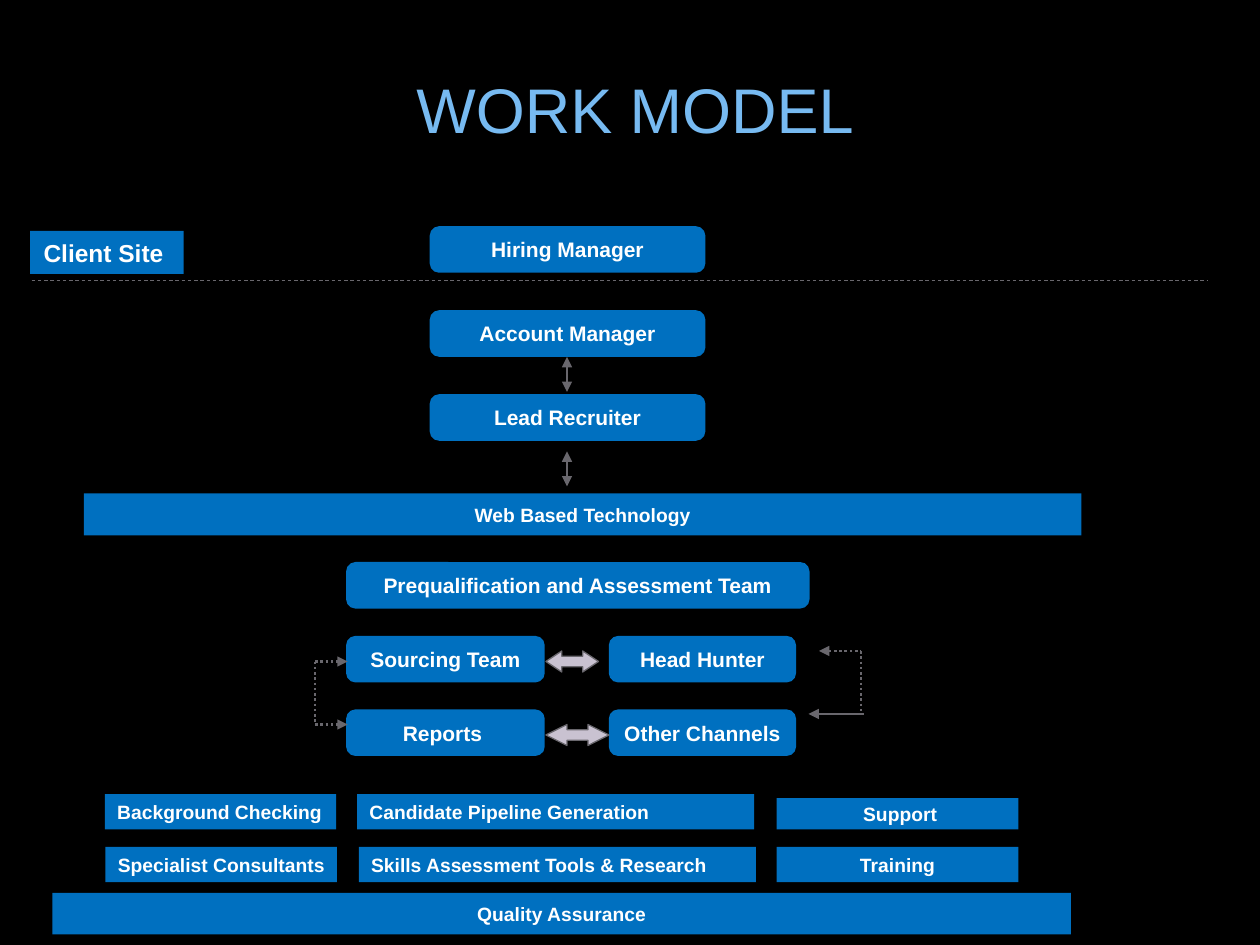
from lxml import etree
from pptx import Presentation
from pptx.dml.color import RGBColor
from pptx.enum.dml import MSO_LINE
from pptx.enum.shapes import MSO_CONNECTOR, MSO_SHAPE
from pptx.enum.text import MSO_ANCHOR, PP_ALIGN
from pptx.oxml.ns import qn
from pptx.util import Pt

BLACK = RGBColor(0x00, 0x00, 0x00)
WHITE = RGBColor(0xFF, 0xFF, 0xFF)
BLUE = RGBColor(0x00, 0x70, 0xC0)
SKY = RGBColor(0x77, 0xBA, 0xF1)
GRAY = RGBColor(0x69, 0x67, 0x6D)
LILAC = RGBColor(0xC9, 0xC2, 0xD1)

RECT = MSO_SHAPE.RECTANGLE
ROUND = MSO_SHAPE.ROUNDED_RECTANGLE
DOUBLE_ARROW = MSO_SHAPE.LEFT_RIGHT_ARROW
STRAIGHT = MSO_CONNECTOR.STRAIGHT
MIDDLE = MSO_ANCHOR.MIDDLE
LEFT, CENTER = PP_ALIGN.LEFT, PP_ALIGN.CENTER
DOT, DASH = MSO_LINE.ROUND_DOT, MSO_LINE.DASH


def write(box, text, size, color, align=CENTER, bold=True, wrap=False):
    frame = box.text_frame
    frame.word_wrap = wrap
    frame.vertical_anchor = MIDDLE
    para = frame.paragraphs[0]
    para.alignment = align
    span = para.add_run()
    span.text = text
    span.font.name = "Arial"
    span.font.size = Pt(size)
    span.font.bold = bold
    span.font.color.rgb = color


def add_box(kind, left, top, width, height, fill):
    box = slide.shapes.add_shape(kind, Pt(left), Pt(top), Pt(width), Pt(height))
    box.shadow.inherit = False
    box.fill.solid()
    box.fill.fore_color.rgb = fill
    box.line.fill.background()
    return box


deck = Presentation()
deck.slide_width, deck.slide_height = Pt(720), Pt(540)
slide = deck.slides.add_slide(deck.slide_layouts[6])
slide.background.fill.solid()
slide.background.fill.fore_color.rgb = BLACK

title = slide.shapes.add_textbox(Pt(30), Pt(36), Pt(666), Pt(52))
write(title, "WORK MODEL", 36, SKY, bold=False, wrap=True)

team_boxes = [
    ("Hiring Manager", 245.6, 129.3, 157.5),
    ("Account Manager", 245.6, 177.3, 157.5),
    ("Lead Recruiter", 245.6, 225.3, 157.5),
    ("Prequalification and Assessment Team", 197.8, 321.2, 264.8),
    ("Sourcing Team", 197.8, 363.4, 113.5),
    ("Head Hunter", 347.9, 363.4, 107),
    ("Reports ", 197.8, 405.4, 113.5),
    ("Other Channels", 347.9, 405.4, 107),
]
for text, left, top, width in team_boxes:
    box = add_box(ROUND, left, top, width, 26.6, BLUE)
    box.adjustments[0] = 0.2
    write(box, text, 12, WHITE)

bars = [
    ("Client Site ", 17.3, 132, 87.7, 24.5, 14, CENTER),
    ("Web Based Technology", 48, 282, 570, 24, 11, CENTER),
    ("Background Checking", 59.9, 453.8, 132.2, 20.2, 11, LEFT),
    ("Candidate Pipeline Generation", 204, 453.8, 226.9, 20.2, 11, LEFT),
    (" Support", 443.8, 456, 138.2, 18, 11, CENTER),
    ("Specialist Consultants", 60.3, 483.9, 132.2, 20.2, 11, LEFT),
    ("Skills Assessment Tools & Research", 205, 483.9, 226.9, 20.2, 11, LEFT),
    ("Training", 443.8, 483.9, 138.2, 20.2, 11, CENTER),
    ("Quality Assurance", 30, 510.2, 582, 23.8, 11, CENTER),
]
for text, left, top, width, height, size, align in bars:
    write(add_box(RECT, left, top, width, height, BLUE), text, size, WHITE, align)

for top, width, head in [(372, 30, 0.75), (414, 36, 1)]:
    arrow = add_box(DOUBLE_ARROW, 312, top, width, 12, LILAC)
    arrow.adjustments[1] = head
    arrow.line.color.rgb = GRAY
    arrow.line.width = Pt(0.75)

links = [
    (324, 204, 324, 224, 0.75, None, ("headEnd", "tailEnd")),
    (324, 258, 324, 278, 0.75, None, ("headEnd", "tailEnd")),
    (462, 408, 493.5, 408, 1.5, None, ("headEnd",)),
    (492, 372, 492, 408, 1.5, DOT, ()),
    (468, 372, 492, 372, 1.5, DOT, ("headEnd",)),
    (180, 378, 180, 414, 1.5, DOT, ()),
    (180, 378, 198.7, 378, 1.5, DOT, ("tailEnd",)),
    (180, 414, 198.7, 414, 1.5, DOT, ("tailEnd",)),
    (18, 160, 690, 160, 0.5, DASH, ()),
]
for x1, y1, x2, y2, weight, dash, ends in links:
    link = slide.shapes.add_connector(STRAIGHT, Pt(x1), Pt(y1), Pt(x2), Pt(y2))
    link.line.color.rgb = GRAY
    link.line.width = Pt(weight)
    if dash:
        link.line.dash_style = dash
    outline = link.line._get_or_add_ln()
    for end in ends:
        etree.SubElement(outline, qn(f"a:{end}"), type="triangle")
    etree.SubElement(link._element.spPr, qn("a:effectLst"))

deck.save("out.pptx")
